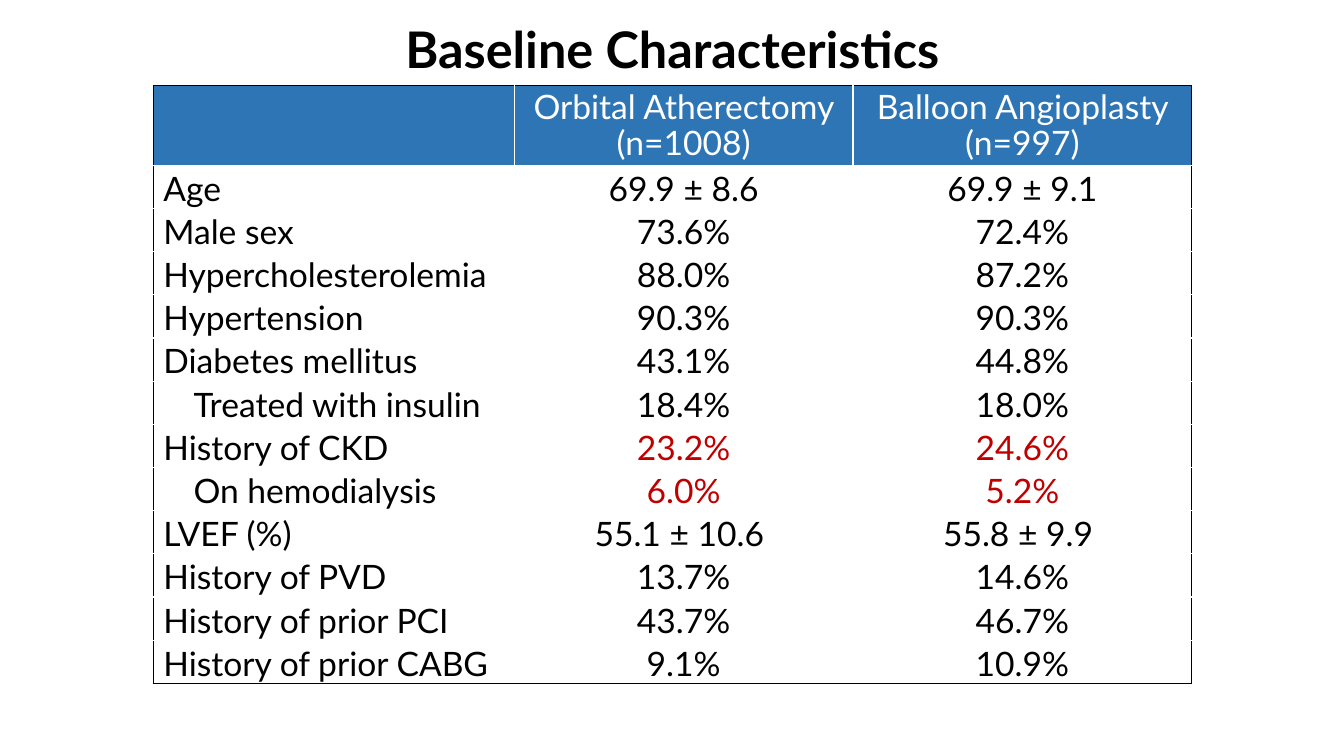
from lxml.etree import SubElement
from pptx import Presentation
from pptx.dml.color import RGBColor
from pptx.enum.text import MSO_ANCHOR, PP_ALIGN
from pptx.oxml.ns import qn
from pptx.util import Inches, Pt

FONT = "Lato"
BLACK = RGBColor(0x00, 0x00, 0x00)
WHITE = RGBColor(0xFF, 0xFF, 0xFF)
BLUE = RGBColor(0x2E, 0x75, 0xB6)
RED = RGBColor(0xC0, 0x00, 0x00)

SLIDE_SIZE = Inches(13.33), Inches(7.5)
TITLE_BOX = Inches(0.92), Inches(-0.21), Inches(11.5), Inches(1.45)
TABLE_BOX = Inches(1.52), Inches(0.85), Inches(10.3), Inches(5.75)
COLUMN_WIDTHS = Inches(3.58), Inches(3.36), Inches(3.36)
HEADER_HEIGHT, ROW_HEIGHT = Inches(0.79), Inches(0.35)
SUBGROUP_INDENT = Inches(0.3)

HEADER = ("", "Orbital Atherectomy (n=1008)", "Balloon Angioplasty (n=997)")
CHARACTERISTICS = (
    ("Age", "69.9 ± 8.6", "69.9 ± 9.1"),
    ("Male sex", "73.6%", "72.4%"),
    ("Hypercholesterolemia", "88.0%", "87.2%"),
    ("Hypertension", "90.3%", "90.3%"),
    ("Diabetes mellitus", "43.1%", "44.8%"),
    ("Treated with insulin", "18.4%", "18.0%"),
    ("History of CKD", "23.2%", "24.6%"),
    ("On hemodialysis", "6.0%", "5.2%"),
    ("LVEF (%)", "55.1 ± 10.6 ", "55.8 ± 9.9 "),
    ("History of PVD", "13.7%", "14.6%"),
    ("History of prior PCI", "43.7%", "46.7%"),
    ("History of prior CABG", "9.1%", "10.9%"),
)
SUBGROUPS = {"Treated with insulin", "On hemodialysis"}
KIDNEY_ROWS = {"History of CKD", "On hemodialysis"}


def style_paragraph(paragraph, size, color, bold=False, align=PP_ALIGN.CENTER, spacing=0.9):
    """Format a paragraph and its runs."""
    paragraph.alignment = align
    paragraph.line_spacing = spacing
    for font in [paragraph.font] + [run.font for run in paragraph.runs]:
        font.name, font.size, font.bold = FONT, Pt(size), bold
        font.color.rgb = color


def add_title(slide, wording):
    """Add the centred slide title."""
    frame = slide.shapes.add_textbox(*TITLE_BOX).text_frame
    frame.word_wrap = True
    frame.vertical_anchor = MSO_ANCHOR.MIDDLE
    frame.text = wording
    style_paragraph(frame.paragraphs[0], 36, BLACK, bold=True)


def set_borders(cell, outer_sides):
    """Draw black lines on the outer sides of a cell and white ones elsewhere."""
    properties = cell._tc.get_or_add_tcPr()
    for side in "LRTB":
        line = SubElement(properties, qn(f"a:ln{side}"), w=str(Pt(1)))
        fill = SubElement(line, qn("a:solidFill"))
        color = BLACK if side in outer_sides else WHITE
        SubElement(fill, qn("a:srgbClr"), val=str(color))


def fill_header(cell, wording):
    """Write a column heading on blue."""
    cell.margin_top = Inches(0.02)
    cell.text = wording
    heading = cell.text_frame.paragraphs[0]
    style_paragraph(heading, 24, WHITE)
    cell.fill.solid()
    cell.fill.fore_color.rgb = BLUE


def fill_body(cell, wording, characteristic):
    """Write a row label or a value."""
    is_label = wording == characteristic
    cell.margin_top = 0
    cell.text = wording
    entry = cell.text_frame.paragraphs[0]
    if is_label:
        cell.margin_left = Inches(0.1)
        if characteristic in SUBGROUPS:
            properties = entry._p.get_or_add_pPr()
            properties.set("marL", str(SUBGROUP_INDENT))
            properties.set("indent", "0")
    color = RED if characteristic in KIDNEY_ROWS and not is_label else BLACK
    align = PP_ALIGN.LEFT if is_label else PP_ALIGN.CENTER
    style_paragraph(entry, 24, color, align=align, spacing=1.07)
    cell.fill.background()


def add_characteristics(slide):
    """Add the table that compares the two treatment groups."""
    rows = (HEADER,) + CHARACTERISTICS
    frame = slide.shapes.add_table(len(rows), len(HEADER), *TABLE_BOX)
    table = frame.table
    table.first_row = table.horz_banding = False
    for column, width in zip(table.columns, COLUMN_WIDTHS):
        column.width = width
    for row_index, wordings in enumerate(rows):
        table.rows[row_index].height = ROW_HEIGHT if row_index else HEADER_HEIGHT
        for column_index, wording in enumerate(wordings):
            cell = table.cell(row_index, column_index)
            cell.vertical_anchor = MSO_ANCHOR.MIDDLE
            cell.margin_left = cell.margin_right = Inches(0.03)
            cell.margin_bottom = 0
            edges = {"L": column_index == 0, "R": column_index == len(HEADER) - 1,
                     "T": row_index == 0, "B": row_index == len(rows) - 1}
            set_borders(cell, [side for side, outer in edges.items() if outer])
            if row_index == 0:
                fill_header(cell, wording)
            else:
                fill_body(cell, wording, wordings[0])
    frame.height = TABLE_BOX[3]


def main():
    """Build and save the slide."""
    presentation = Presentation()
    presentation.slide_width, presentation.slide_height = SLIDE_SIZE
    slide = presentation.slides.add_slide(presentation.slide_layouts[6])
    add_title(slide, "Baseline Characteristics")
    add_characteristics(slide)
    presentation.save("out.pptx")


if __name__ == "__main__":
    main()
